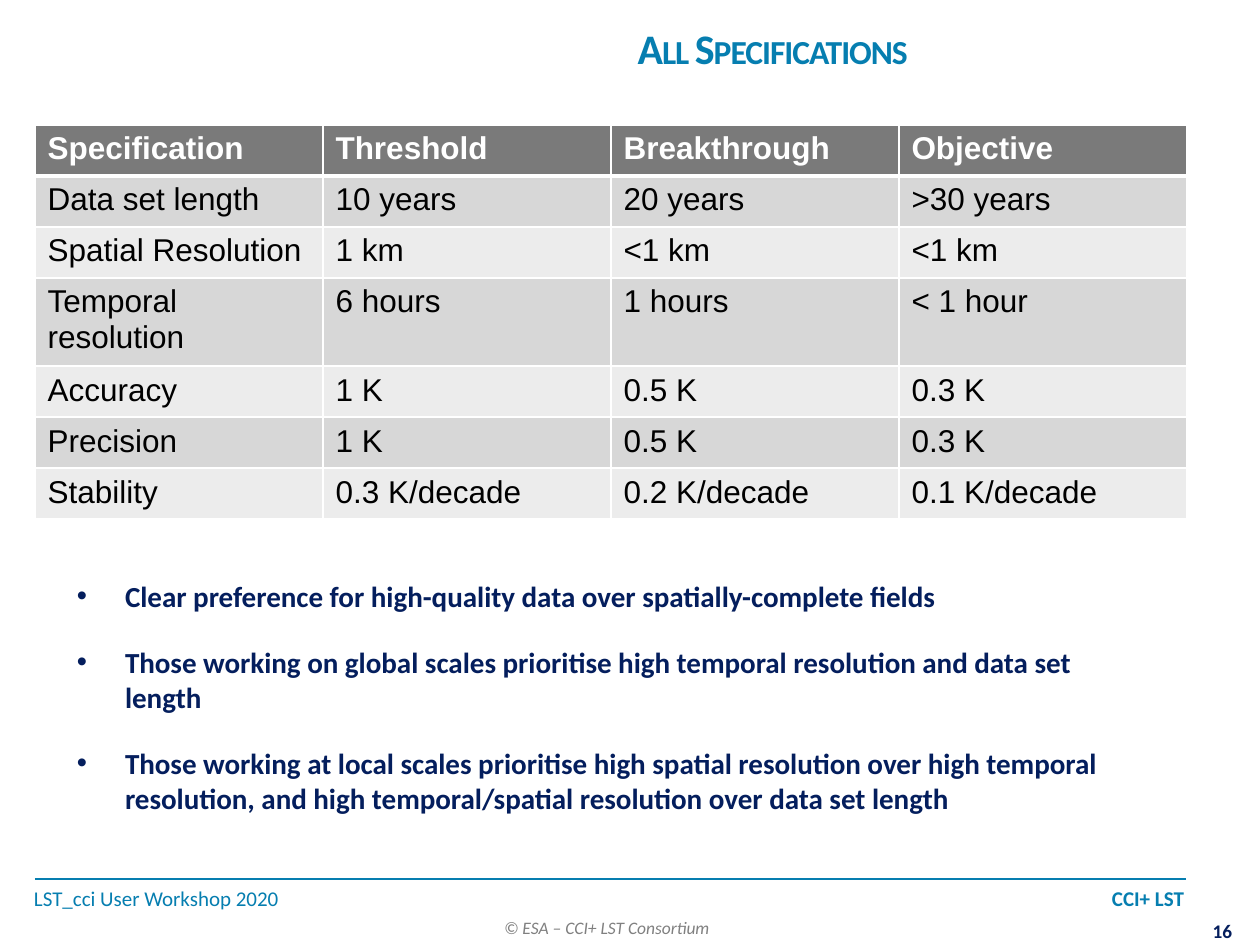
from lxml import etree
from pptx import Presentation
from pptx.dml.color import RGBColor
from pptx.enum.shapes import MSO_CONNECTOR
from pptx.enum.text import MSO_ANCHOR, PP_ALIGN
from pptx.oxml.ns import qn
from pptx.util import Pt

STRAIGHT = MSO_CONNECTOR.STRAIGHT
TOP, MIDDLE = MSO_ANCHOR.TOP, MSO_ANCHOR.MIDDLE
LEFT, CENTER = PP_ALIGN.LEFT, PP_ALIGN.CENTER

EMU_PER_PX = 914400 / 126
BLUE, NAVY, GREY, WHITE, BLACK = "067EB0", "041E5D", "808080", "FFFFFF", "000000"
HEADER_FILL, BAND_FILLS = "7A7A7A", ("D7D7D7", "ECECEC")

SPECIFICATIONS = [
    ("Specification", "Threshold", "Breakthrough", "Objective"),
    ("Data set length", "10 years", "20 years", ">30 years"),
    ("Spatial Resolution", "1 km", "<1 km", "<1 km"),
    ("Temporal resolution", "6 hours", "1 hours", "< 1 hour"),
    ("Accuracy", "1 K", "0.5 K", "0.3 K"),
    ("Precision", "1 K", "0.5 K", "0.3 K"),
    ("Stability", "0.3 K/decade", "0.2 K/decade", "0.1 K/decade"),
]
FINDINGS = [
    "Clear preference for high-quality data over spatially-complete fields",
    "Those working on global scales prioritise high temporal resolution and data set length",
    "Those working at local scales prioritise high spatial resolution over high temporal "
    "resolution, and high temporal/spatial resolution over data set length",
]


def px(length):
    return round(length * EMU_PER_PX)


def color(value):
    return RGBColor.from_string(value)


def format_run(run, size, text_color, bold=False, italic=False, font="Calibri"):
    run.font.name = font
    run.font.size = Pt(size)
    run.font.color.rgb = color(text_color)
    run.font.bold = bold
    run.font.italic = italic


def add_text_frame(slide, box, margins=(13, 6), wrap=True, anchor=TOP):
    frame = slide.shapes.add_textbox(*map(px, box)).text_frame
    frame.word_wrap = wrap
    frame.vertical_anchor = anchor
    frame.margin_left = frame.margin_right = px(margins[0])
    frame.margin_top = frame.margin_bottom = px(margins[1])
    return frame


def add_label(slide, box, text, size, text_color, align=LEFT, style=None, **frame_options):
    """Add a one-line text box and return its run."""
    paragraph = add_text_frame(slide, box, **frame_options).paragraphs[0]
    paragraph.text = text
    paragraph.alignment = align
    run = paragraph.runs[0]
    format_run(run, size, text_color, **(style or {}))
    return run


def add_title(slide):
    run = add_label(slide, (441, 6, 645, 84), "All Specifications", 24, BLUE,
                    align=CENTER, style={"bold": True}, anchor=MIDDLE)
    properties = run.font._element
    properties.set("cap", "small")
    properties.set("spc", "-60")


def add_footer(slide):
    width = 1152
    frame = add_text_frame(slide, (34, 880, width, 38), margins=(0, 6))
    paragraph = frame.paragraphs[0]
    tabs = etree.SubElement(paragraph._p.get_or_add_pPr(), qn("a:tabLst"))
    etree.SubElement(tabs, qn("a:tab"), pos=str(px(width - 2)), algn="r")
    for text, bold in (("LST_cci User Workshop 2020\t", False), ("CCI+ LST", True)):
        run = paragraph.add_run()
        run.text = text
        format_run(run, 12, BLUE, bold)

    rule = slide.shapes.add_connector(STRAIGHT, px(35), px(879), px(1186), px(879))
    rule.line.color.rgb = color(BLUE)
    rule.line.width = Pt(1)
    etree.SubElement(rule._element.spPr, qn("a:effectLst"))

    add_label(slide, (491, 911, 234, 34), "© ESA – CCI+ LST Consortium", 10, GREY,
              style={"italic": True}, wrap=False)
    add_label(slide, (1206, 919, 33, 24), "16", 11, NAVY, align=CENTER,
              style={"bold": True}, margins=(0, 0), wrap=False)


def set_borders(cell, top, bottom):
    """Draw white cell borders; top and bottom widths are in points."""
    properties = cell._tc.get_or_add_tcPr()
    for side, width in (("lnL", 1), ("lnR", 1), ("lnT", top), ("lnB", bottom)):
        line = etree.SubElement(properties, qn(f"a:{side}"), w=str(Pt(width)))
        fill = etree.SubElement(line, qn("a:solidFill"))
        etree.SubElement(fill, qn("a:srgbClr"), val=WHITE)


def add_specification_table(slide):
    column_width, row_height = 288, 51
    row_count, column_count = len(SPECIFICATIONS), len(SPECIFICATIONS[0])
    table = slide.shapes.add_table(
        row_count, column_count, px(35), px(125),
        px(column_width * column_count), px(row_height * row_count)).table
    table.horz_banding = False
    for row_index, values in enumerate(SPECIFICATIONS):
        is_header = row_index == 0
        fill = HEADER_FILL if is_header else BAND_FILLS[(row_index - 1) % 2]
        for column_index, value in enumerate(values):
            cell = table.cell(row_index, column_index)
            cell.text = value
            format_run(cell.text_frame.paragraphs[0].runs[0], 18,
                       WHITE if is_header else BLACK, bold=is_header, font="Arial")
            set_borders(cell, top=3 if row_index == 1 else 1, bottom=3 if is_header else 1)
            cell.fill.solid()
            cell.fill.fore_color.rgb = color(fill)


def add_bullets(slide, box, texts):
    frame = add_text_frame(slide, box)
    for index, text in enumerate(texts):
        paragraph = frame.add_paragraph() if index else frame.paragraphs[0]
        paragraph.text = text
        paragraph.space_before = Pt(12 if index else 0)
        paragraph.space_after = Pt(6)
        properties = paragraph._p.get_or_add_pPr()
        properties.set("marL", str(px(48)))
        properties.set("indent", str(-px(48)))
        etree.SubElement(properties, qn("a:buFont"), typeface="Arial")
        etree.SubElement(properties, qn("a:buChar"), char="•")
        format_run(paragraph.runs[0], 16.6, NAVY, bold=True)


def main():
    presentation = Presentation()
    presentation.slide_width, presentation.slide_height = px(1260), px(945)
    slide = presentation.slides.add_slide(presentation.slide_layouts[6])
    add_footer(slide)
    add_title(slide)
    add_specification_table(slide)
    add_bullets(slide, (64, 572, 1101, 242), FINDINGS)
    presentation.save("out.pptx")


if __name__ == "__main__":
    main()
